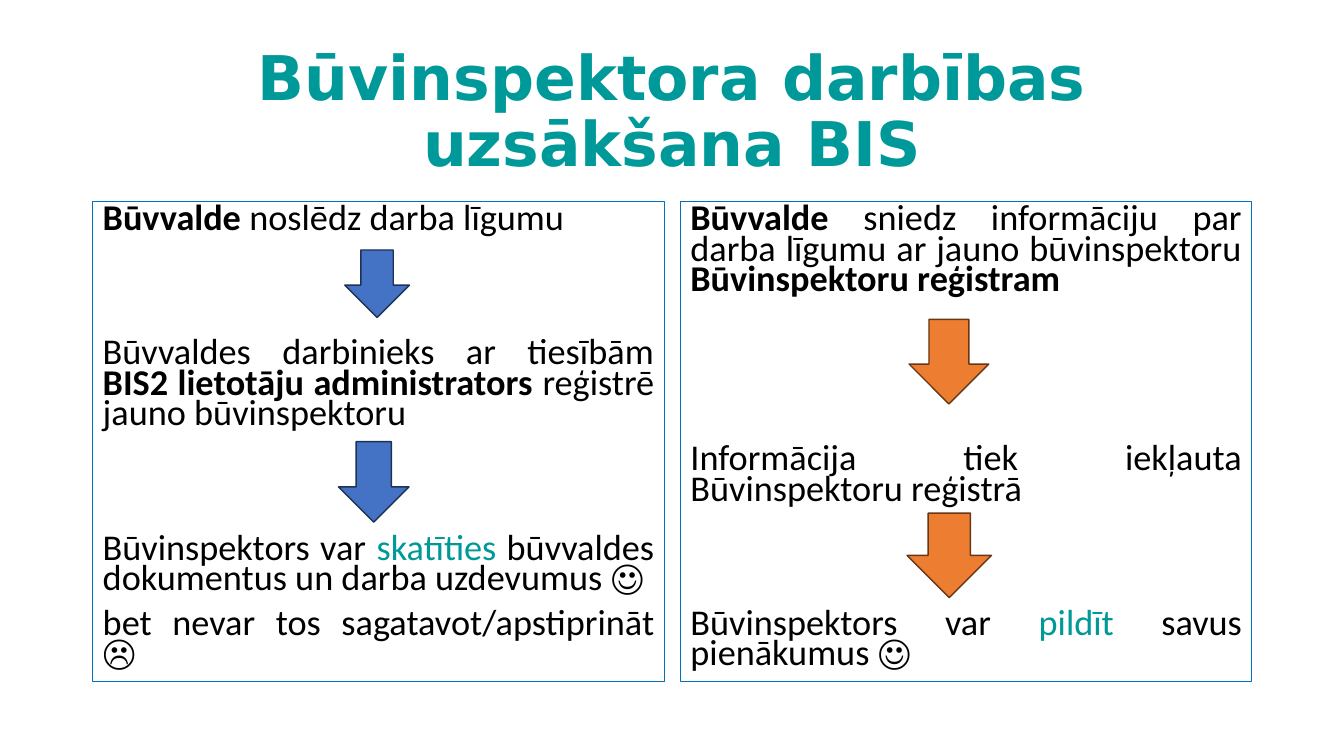
from pptx import Presentation
from pptx.dml.color import RGBColor
from pptx.enum.shapes import MSO_SHAPE
from pptx.enum.text import MSO_ANCHOR, PP_ALIGN
from pptx.util import Cm, Pt

DOWN_ARROW = MSO_SHAPE.DOWN_ARROW
TOP, MIDDLE = MSO_ANCHOR.TOP, MSO_ANCHOR.MIDDLE
CENTER, JUSTIFY = PP_ALIGN.CENTER, PP_ALIGN.JUSTIFY

TEAL, BLACK, FRAME_BLUE = "009999", "000000", "0070C0"
BLUE, DARK_BLUE = "4472C4", "1E3256"
ORANGE, DARK_ORANGE = "ED7D31", "683715"

NEAR, STEP, WIDE_STEP = 10, 74, 106

LEFT_STEPS = [
    (0, [("Būvvalde", {"bold": True}), (" noslēdz darba līgumu", {})]),
    (STEP, [
        ("Būvvaldes darbinieks ar tiesībām ", {}),
        ("BIS2 lietotāju administrators ", {"bold": True}),
        ("reģistrē jauno būvinspektoru", {}),
    ]),
    (STEP, [
        ("Būvinspektors var ", {}),
        ("skatīties", {"color": TEAL}),
        (" būvvaldes dokumentus un darba uzdevumus ☺", {}),
    ]),
    (NEAR, [("bet nevar tos sagatavot/apstiprināt ☹", {})]),
]

RIGHT_STEPS = [
    (0, [
        ("Būvvalde", {"bold": True}),
        (" sniedz informāciju par darba līgumu ar jauno būvinspektoru ", {}),
        ("Būvinspektoru reģistram", {"bold": True}),
    ]),
    (WIDE_STEP, [("Informācija tiek iekļauta Būvinspektoru reģistrā", {})]),
    (STEP, [
        ("Būvinspektors var ", {}),
        ("pildīt", {"color": TEAL}),
        (" savus pienākumus ☺", {}),
    ]),
]

ARROWS = [
    (8.69, 6.3, 1.63, 1.7, BLUE, DARK_BLUE),
    (8.53, 11.13, 1.78, 2.03, BLUE, DARK_BLUE),
    (22.91, 8.05, 2.01, 2.13, ORANGE, DARK_ORANGE),
    (22.86, 12.93, 2.13, 2.13, ORANGE, DARK_ORANGE),
]


def rgb(color):
    return RGBColor.from_string(color)


def add_span(para, text, size=25.9, font="Calibri", color=BLACK, bold=False):
    span = para.add_run()
    span.text = text
    span.font.size = Pt(size)
    span.font.name = font
    span.font.color.rgb = rgb(color)
    span.font.bold = bold


def add_box(page, left, top, width, height, anchor):
    box = page.shapes.add_textbox(Cm(left), Cm(top), Cm(width), Cm(height))
    box.text_frame.word_wrap = True
    box.text_frame.vertical_anchor = anchor
    return box


def add_title(page, text):
    box = add_box(page, 2.34, 1.02, 29.21, 3.68, MIDDLE)
    para = box.text_frame.paragraphs[0]
    para.alignment = CENTER
    para.line_spacing = 0.9
    add_span(para, text, size=44, font="DejaVu Sans", color=TEAL, bold=True)


def add_panel(page, left, steps):
    box = add_box(page, left, 5.08, 14.4, 12.09, TOP)
    box.line.color.rgb = rgb(FRAME_BLUE)
    box.line.width = Pt(0.75)
    frame = box.text_frame
    for index, (gap, spans) in enumerate(steps):
        para = frame.add_paragraph() if index else frame.paragraphs[0]
        para.alignment = JUSTIFY
        para.line_spacing = 0.7
        para.space_before = Pt(gap)
        for text, style in spans:
            add_span(para, text, **style)


def add_arrow(page, left, top, width, height, fill, line):
    arrow = page.shapes.add_shape(DOWN_ARROW, Cm(left), Cm(top), Cm(width), Cm(height))
    arrow.shadow.inherit = False
    arrow.fill.solid()
    arrow.fill.fore_color.rgb = rgb(fill)
    arrow.line.color.rgb = rgb(line)
    arrow.line.width = Pt(1)


def main():
    deck = Presentation()
    deck.slide_width, deck.slide_height = Cm(33.87), Cm(19.05)
    page = deck.slides.add_slide(deck.slide_layouts[6])
    add_title(page, "Būvinspektora darbības uzsākšana BIS")
    add_panel(page, 2.34, LEFT_STEPS)
    add_panel(page, 17.15, RIGHT_STEPS)
    for arrow in ARROWS:
        add_arrow(page, *arrow)
    deck.save("out.pptx")


if __name__ == "__main__":
    main()
